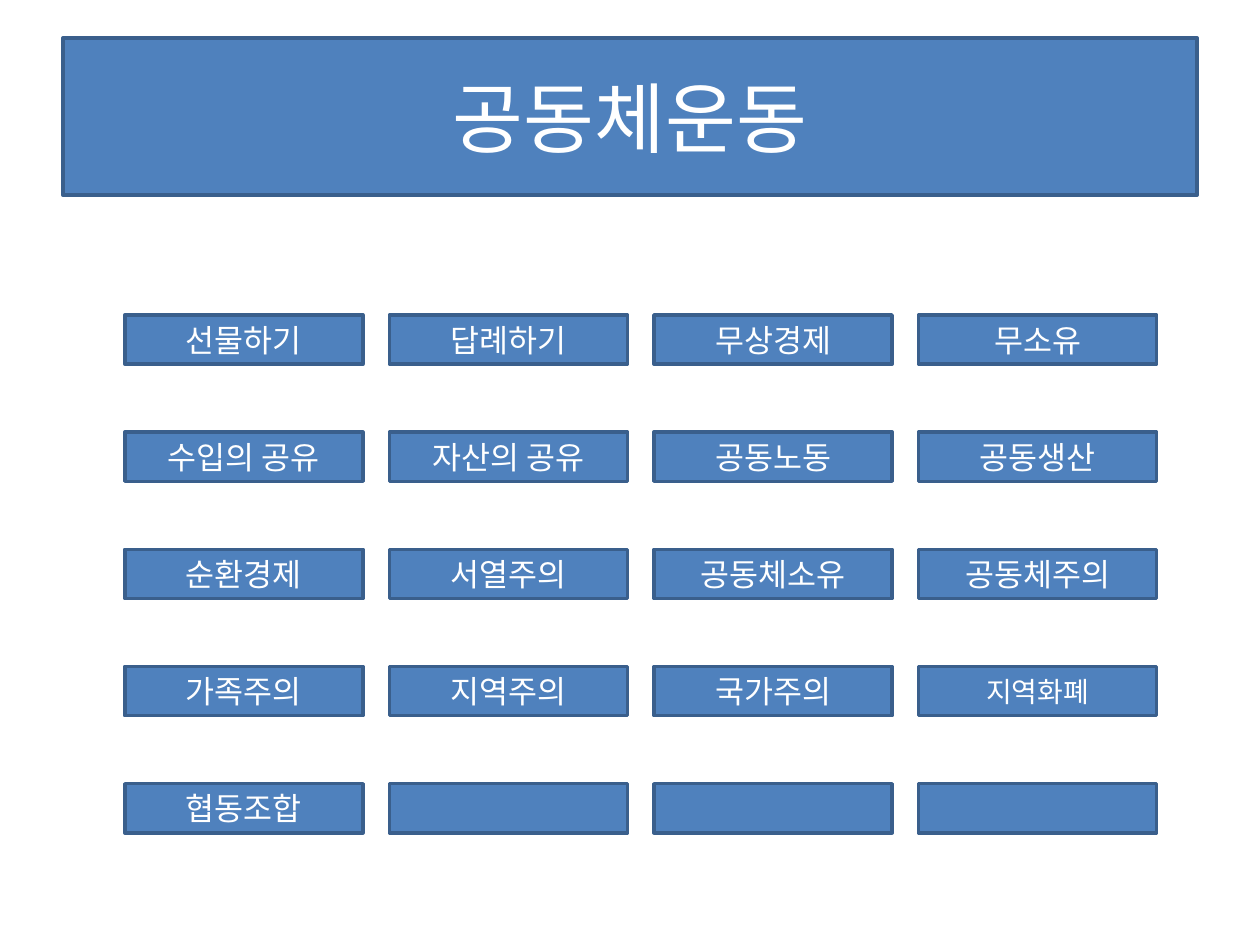
"""Build the community movement slide: a title bar over a grid of keyword boxes."""
import pptx
import pptx.dml.color
import pptx.enum.shapes
import pptx.enum.text
import pptx.oxml.ns
import pptx.util
from lxml import etree

FONT = "Noto Sans CJK KR"
LEFT, TOP, COL, ROW = 0.99, 2.5, 2.1, 0.93
BOX_W, BOX_H = 0.9 * COL, 0.42 * ROW


def rgb(value):
    return pptx.dml.color.RGBColor.from_string(value)


def add_box(s, x, y, w, h, text, size):
    sp = s.shapes.add_shape(pptx.enum.shapes.MSO_SHAPE.RECTANGLE,
                            *[pptx.util.Inches(v) for v in (x, y, w, h)])
    sp.shadow.inherit = False
    sp.fill.solid()
    sp.fill.fore_color.rgb = rgb("4F81BD")
    sp.line.color.rgb = rgb("3A5F8C")
    sp.line.width = pptx.util.Pt(2)
    if not text:
        return
    tf = sp.text_frame
    frame = {"word_wrap": True, "vertical_anchor": pptx.enum.text.MSO_ANCHOR.MIDDLE}
    for name, value in frame.items():
        setattr(tf, name, value)
    p = tf.paragraphs[0]
    p.alignment = pptx.enum.text.PP_ALIGN.CENTER
    r = p.add_run()
    r.text = text
    for name, value in {"name": FONT, "size": pptx.util.Pt(size)}.items():
        setattr(r.font, name, value)
    r.font.color.rgb = rgb("FFFFFF")
    ea = etree.SubElement(r.font._element, pptx.oxml.ns.qn("a:ea"))
    ea.set("typeface", FONT)


prs = pptx.Presentation()
prs.slide_width = pptx.util.Inches(10)
prs.slide_height = pptx.util.Inches(7.5)
s = prs.slides.add_slide(prs.slide_layouts[6])

add_box(s, 0.5, 0.3, 9, 1.25, "공동체운동", 44)

keywords = [
    ["선물하기", "답례하기", "무상경제", "무소유"],
    ["수입의 공유", "자산의 공유", "공동노동", "공동생산"],
    ["순환경제", "서열주의", "공동체소유", "공동체주의"],
    ["가족주의", "지역주의", "국가주의", "지역화폐"],
    ["협동조합", "", "", ""],
]
sizes = {"지역화폐": 16}
for row, words in enumerate(keywords):
    for col, word in enumerate(words):
        add_box(s, LEFT + col * COL, TOP + row * ROW, BOX_W, BOX_H, word, sizes.get(word, 18))

prs.save("out.pptx")
